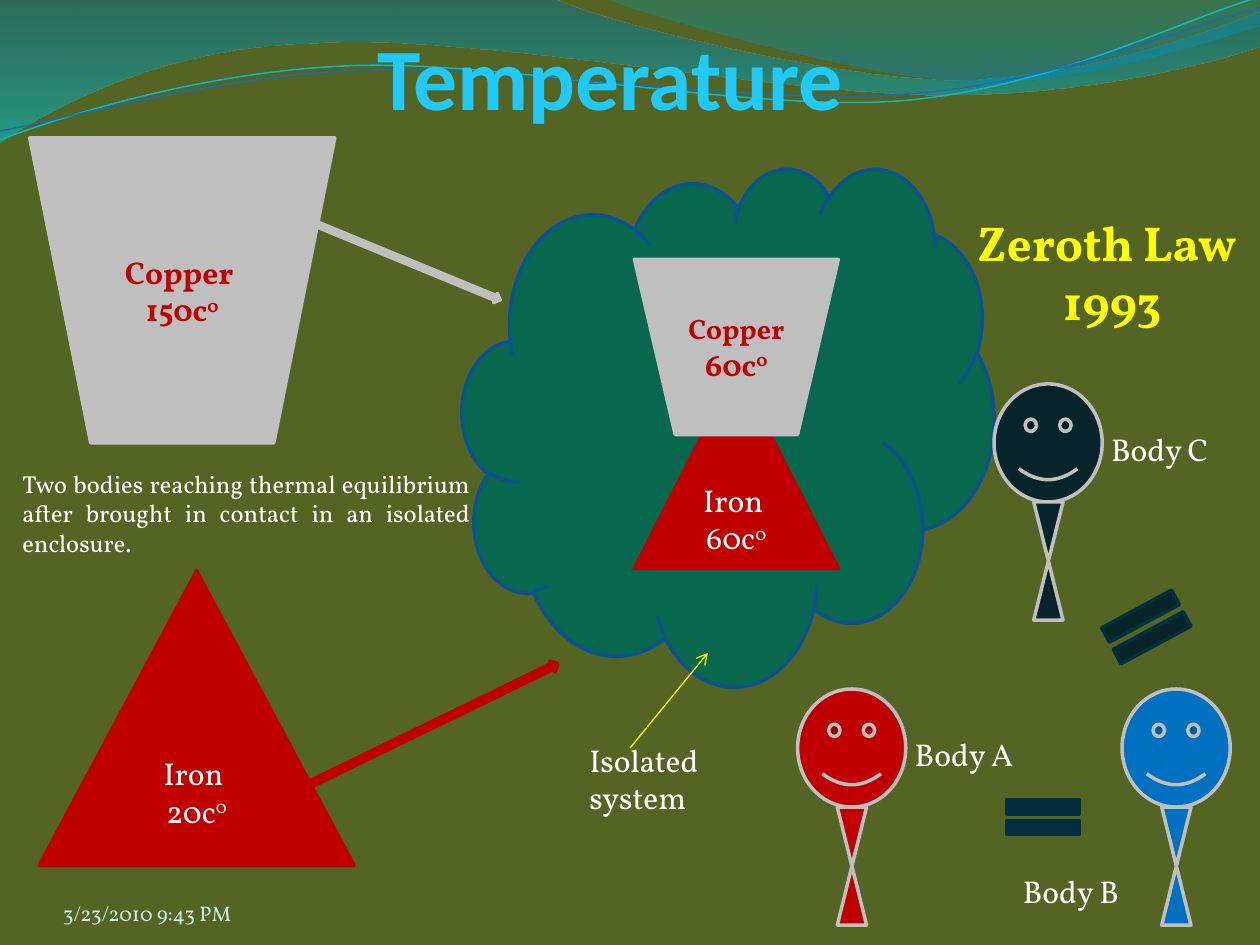
from lxml.etree import SubElement
from pptx import Presentation
from pptx.dml.color import RGBColor
from pptx.enum.shapes import MSO_CONNECTOR, MSO_SHAPE as Preset
from pptx.enum.text import MSO_ANCHOR as Anchor, PP_ALIGN as Align
from pptx.oxml.ns import qn
from pptx.util import Cm, Pt

OLIVE = RGBColor(0x54, 0x64, 0x22)
SKY = RGBColor(0x20, 0xC9, 0xF8)
RED = RGBColor(0xC0, 0x00, 0x00)
GREY = RGBColor(0xBF, 0xBF, 0xBF)
WHITE = RGBColor(0xFF, 0xFF, 0xFF)
YELLOW = RGBColor(0xFF, 0xFF, 0x00)
GREEN = RGBColor(0x08, 0x68, 0x4E)
NAVY = RGBColor(0x0B, 0x52, 0x92)
BLUE = RGBColor(0x00, 0x70, 0xC0)
DARK_TEAL = RGBColor(0x02, 0x30, 0x3E)
NEAR_BLACK = RGBColor(0x07, 0x24, 0x28)
PALE = RGBColor(0xD1, 0xEA, 0xEE)
WAVE_LEFT = [(0, RGBColor(0x00, 0x74, 0xA1), 45), (1, RGBColor(0x00, 0xC6, 0xCF), 55)]
WAVE_RIGHT = [(0, RGBColor(0x00, 0xA1, 0xA9), 30), (0.8, RGBColor(0x00, 0x8B, 0xBF), 45)]
CYAN_LINE = RGBColor(0x0A, 0xB8, 0xBF)
BLUE_LINE = RGBColor(0x0F, 0x6F, 0xC6)

prs = Presentation()
prs.slide_width, prs.slide_height = Cm(25.4), Cm(19.05)
slide = prs.slides.add_slide(prs.slide_layouts[6])
slide.background.fill.solid()
slide.background.fill.fore_color.rgb = OLIVE
shapes = slide.shapes


def write(text, box=None, frame=None, size=18, color=WHITE, bold=False, font="Vollkorn",
          align=Align.LEFT, anchor=Anchor.TOP, insets=(0.25, 0.13, 0.25, 0.13)):
    """Fill a frame, or a new text box; lines split at newlines, ^ starts a superscript."""
    if frame is None:
        frame = shapes.add_textbox(*map(Cm, box)).text_frame
    frame.word_wrap = True
    frame.vertical_anchor = anchor
    frame.margin_left, frame.margin_top, frame.margin_right, frame.margin_bottom = map(Cm, insets)
    for row, line in enumerate(text.split("\n")):
        paragraph = frame.add_paragraph() if row else frame.paragraphs[0]
        paragraph.alignment = align
        for level, part in enumerate(line.split("^")):
            run = paragraph.add_run()
            run.text = part
            run.font.name, run.font.size, run.font.bold = font, Pt(size), bold
            run.font.color.rgb = color
            if level:
                run.font._element.set("baseline", "30000")
    return frame


def draw(preset, box, fill, line=GREY, rotation=0):
    shape = shapes.add_shape(preset, *map(Cm, box))
    shape.shadow.inherit = False
    shape.fill.solid()
    shape.fill.fore_color.rgb = fill
    shape.line.color.rgb = line
    shape.line.width = Pt(2)
    shape.rotation = rotation
    return shape


# Header waves: a start point, then segments of one point (line) or three (Bezier curve)
waves = [
    ((0, 0), [
        [(11.18, -0.03)], [(12.09, 0.43), (16.87, 1.6), (19.25, 1.6)],
        [(21.67, 1.6), (24.33, 0.66), (25.4, 0.23)], [(25.43, 0.91)],
        [(24.97, 1.12), (22.1, 1.93), (18.95, 1.91)], [(15.8, 1.91), (9.7, 0.71), (6.53, 0.86)],
        [(3.28, 0.91), (1.17, 2.11), (-0.03, 2.87)]], WAVE_LEFT, None, 0),
    ((12.17, -0.03), [
        [(12.93, 0.28), (17.32, 1.57), (19.53, 1.65)],
        [(21.74, 1.75), (24.41, 0.81), (25.4, 0.53)], [(25.4, 0)]], WAVE_RIGHT, None, 0),
    ((-0.05, 2.22), [
        [(1.19, 1.82), (4.02, 1.04), (7.05, 1.06)], [(10.05, 1.07), (15.02, 2.37), (18.08, 2.29)],
        [(21.13, 2.2), (23.87, 0.91), (25.41, 0.55)]], None, CYAN_LINE, 0.85),
    ((-0.04, 2.04), [
        [(1.16, 1.9), (4.18, 1.15), (7.2, 1.16)], [(10.25, 1.18), (15.13, 2.25), (18.19, 2.16)],
        [(21.21, 2.1), (23.93, 1.06), (25.45, 0.75)]], None, BLUE_LINE, 0.75),
]
for start, segments, stops, line_color, line_width in waves:
    builder = shapes.build_freeform(Cm(start[0]), Cm(start[1]))
    builder.add_line_segments([(Cm(x), Cm(y)) for segment in segments for x, y in segment],
                              close=stops is not None)
    wave = builder.convert_to_shape()
    wave.shadow.inherit = False
    # Join the three straight steps of each curve into one Bezier segment
    steps = iter(list(wave._element.iter(qn("a:lnTo"))))
    for segment in segments:
        first, *others = [next(steps) for _ in segment]
        if others:
            first.tag = qn("a:cubicBezTo")
            for step in others:
                first.append(step[0])
                step.getparent().remove(step)
    if stops:
        wave.fill.gradient()
        wave.fill.gradient_angle = 270
        for stop, (position, color, _) in zip(wave.fill.gradient_stops, stops):
            stop.position = position
            stop.color.rgb = color
        for color_node, (_, _, opacity) in zip(wave._element.iter(qn("a:srgbClr")), stops):
            SubElement(color_node, qn("a:alpha")).set("val", str(opacity * 1000))
        wave.line.fill.background()
    else:
        wave.rotation = 357.3
        wave.fill.background()
        wave.line.color.rgb = line_color
        wave.line.width = Pt(line_width)

write("Temperature", (1.27, 0.2, 22.86, 2.39), size=50, color=SKY, bold=True, font="Calibri",
      align=Align.CENTER, anchor=Anchor.BOTTOM, insets=(0, 0.13, 0.78, 0))

# Isolated enclosure, then the bodies before and after contact
draw(Preset.CLOUD, (9.32, 3.38, 10.72, 10.44), GREEN, NAVY)
IRON, COPPER = Preset.ISOSCELES_TRIANGLE, Preset.FLOWCHART_MANUAL_OPERATION
bodies = [
    (IRON, "Iron \n20c^0", (0.79, 11.51, 6.35, 5.94), 18),
    (COPPER, "Copper \n150c^0", (0.6, 2.78, 6.15, 6.15), 18),
    (IRON, "Iron \n60c^0", (12.79, 7.42, 4.11, 4.04), 18),
    (COPPER, "Copper \n60c^0", (12.79, 5.23, 4.11, 3.53), 16),
]
for metal, label, box, size in bodies:
    is_iron = metal == IRON
    fill = RED if is_iron else GREY
    frame = write(label, frame=draw(metal, box, fill, fill).text_frame, size=size,
                  color=WHITE if is_iron else RED, bold=not is_iron,
                  align=Align.CENTER, anchor=Anchor.MIDDLE)
    for run in frame.paragraphs[1].runs:
        run.font.size = Pt(18)

draw(Preset.RIGHT_ARROW, (5.56, 5.05, 4.7, 0.2), GREY, GREY, 22.4)
draw(Preset.RIGHT_ARROW, (5.36, 14.61, 6.2, 0.25), RED, RED, 334.1)
write("Two bodies reaching thermal equilibrium after brought in contact in an isolated enclosure.",
      (0.2, 9.32, 9.53, 2.06), size=14, align=Align.JUSTIFY)
write("Isolated system", (11.63, 14.8, 4.45, 0.86))

pointer = shapes.add_connector(MSO_CONNECTOR.STRAIGHT, Cm(12.7), Cm(15.08), Cm(14.27), Cm(13.16))
pointer.line.color.rgb = YELLOW
pointer.line.width = Pt(0.75)
SubElement(pointer.line._get_or_add_ln(), qn("a:tailEnd")).set("type", "arrow")
SubElement(pointer._element.spPr, qn("a:effectLst"))

# Zeroth law: three bodies in equilibrium
figures = [
    ("Body B", 22.62, 13.89, BLUE, (-2.38, 3.56)),
    ("Body A", 16.08, 13.89, RED, (1.98, 0.79)),
    ("Body C", 20.04, 7.74, NEAR_BLACK, (1.98, 0.79)),
]
for name, left, top, color, (label_dx, label_dy) in figures:
    draw(Preset.SMILEY_FACE, (left, top, 2.18, 2.38), color)
    draw(Preset.FLOWCHART_COLLATE, (left + 0.8, top + 2.38, 0.59, 2.38), color)
    write(name, (left + label_dx, top + label_dy, 2.77, 1.02), insets=(0.38, 0.13, 0.25, 0.13))

draw(Preset.MATH_EQUAL, (20.04, 15.88, 1.98, 1.19), DARK_TEAL, DARK_TEAL)
draw(Preset.MATH_EQUAL, (22.02, 11.94, 2.18, 1.4), NEAR_BLACK, DARK_TEAL, 331.7)
law = write("Zeroth Law\n1993", (19.45, 4.16, 5.94, 2.64), size=28, color=YELLOW, bold=True)
law.paragraphs[1].alignment = Align.CENTER

write("3/23/2010 9:43 PM", (1.27, 17.65, 5.92, 1.02), size=12, color=PALE,
      anchor=Anchor.BOTTOM, insets=(0, 0, 0, 0))

prs.save("out.pptx")
